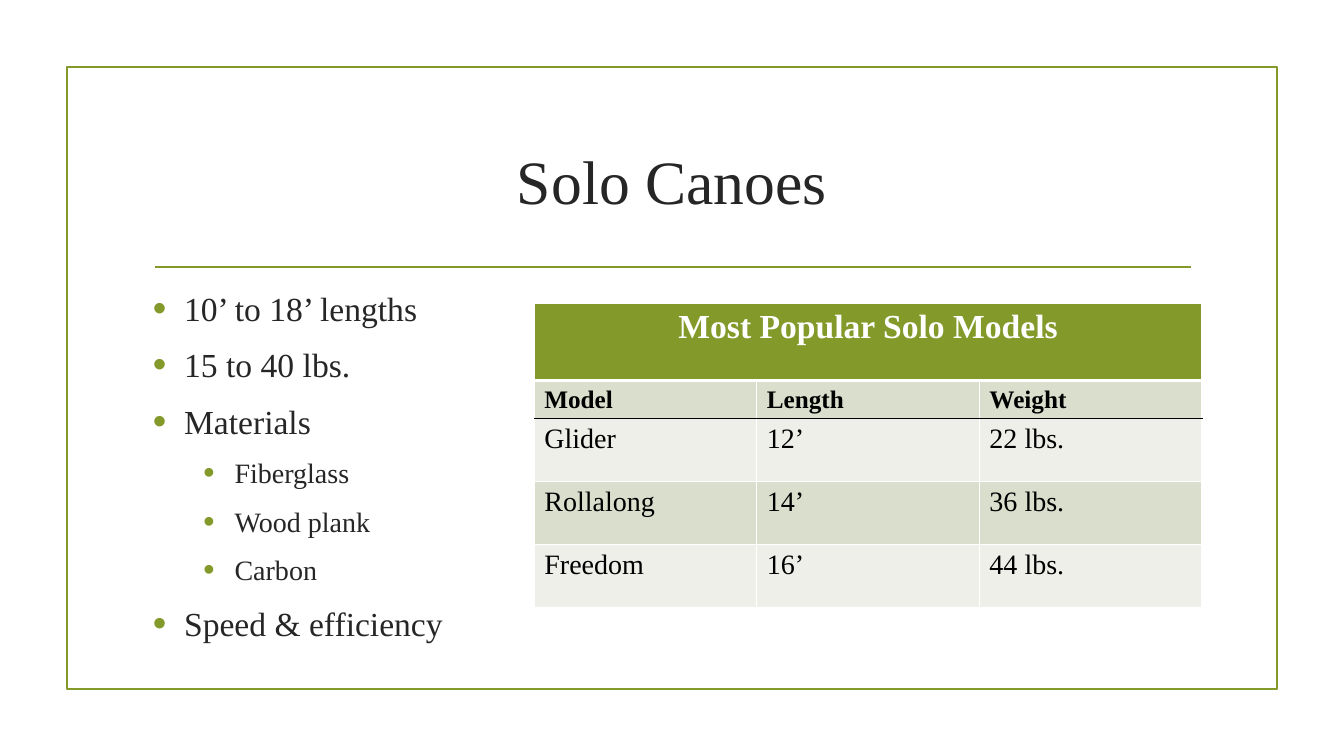
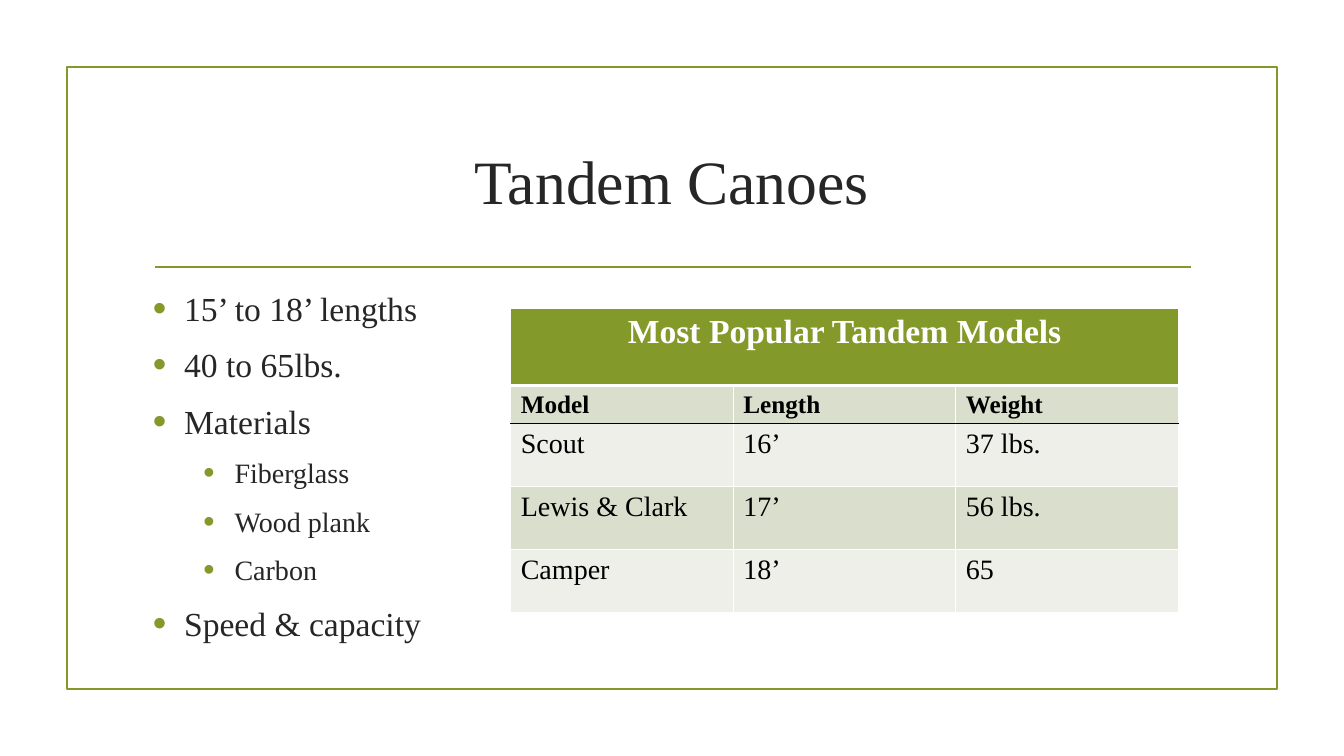
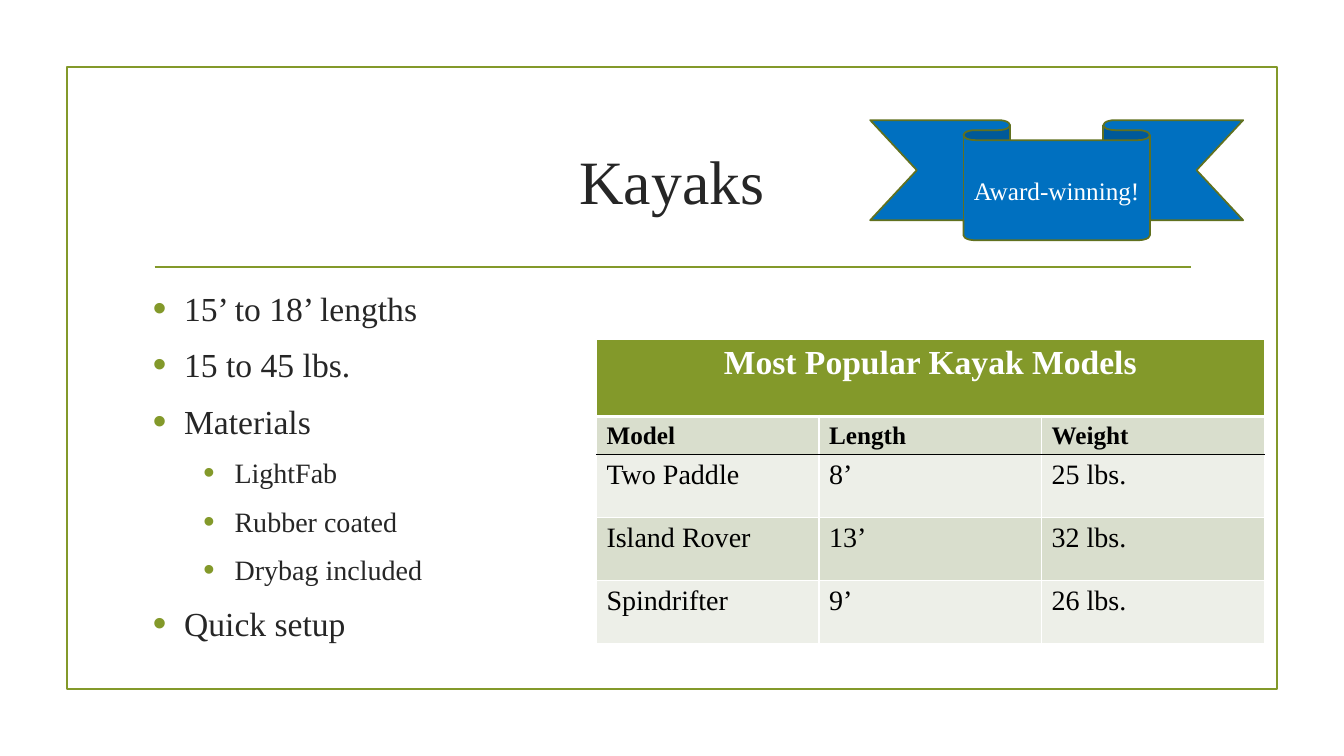
"""Build three slides on canoes and kayaks, each with a bullet list and a model table."""
from dataclasses import dataclass

from lxml import etree
from pptx import Presentation
from pptx.dml.color import RGBColor
from pptx.enum.shapes import MSO_CONNECTOR, MSO_SHAPE
from pptx.enum.text import MSO_ANCHOR, MSO_AUTO_SIZE, PP_ALIGN
from pptx.oxml.ns import qn
from pptx.util import Inches, Pt

RECTANGLE, RIBBON = MSO_SHAPE.RECTANGLE, MSO_SHAPE.DOWN_RIBBON
STRAIGHT = MSO_CONNECTOR.STRAIGHT
CENTER, LEFT = PP_ALIGN.CENTER, PP_ALIGN.LEFT
MIDDLE = MSO_ANCHOR.MIDDLE
NO_AUTOFIT = MSO_AUTO_SIZE.NONE

COLUMNS, ROWS = 160, 90
FRAME_AREA = (8, 8, 144, 74)
RULE_START, RULE_END, RULE_ROW = 18.4, 141.8, 31.8
TITLE_AREA = (17, 12.8, 126, 17.2)
BODY_AREA = (17, 33.6, 126, 43.6)
TABLE_COLUMN = 26.5
TABLE_ROWS = (9.2, 4.3, 7.5, 7.5, 7.5)
HEADINGS = ("Model", "Length", "Weight")


@dataclass(frozen=True)
class Theme:
    """Colours, type sizes and line widths of the deck."""

    font: str = "Times New Roman"
    accent: str = "83992A"
    accent_dark: str = "61711F"
    ink: str = "262626"
    black: str = "000000"
    white: str = "FFFFFF"
    band_dark: str = "D9DECD"
    band_light: str = "EDEFE8"
    award: str = "0070C0"
    title_size: int = 44
    list_sizes: tuple = (24, 20)
    table_sizes: tuple = (24, 18, 20)
    label_size: int = 18
    outline: float = 1.25
    border: float = 1
    header_border: float = 3
    space_share: float = 0.23
    space_after: int = 6
    hanging: float = 0.31
    level_step: float = 0.5


class Deck:
    """Holds the theme and the current slide, and draws each kind of element."""

    def __init__(self, theme):
        """Start an empty widescreen presentation."""
        self.theme = theme
        self.presentation = Presentation()
        self.presentation.slide_width = Inches(13.33)
        self.presentation.slide_height = Inches(7.5)
        self.page = None

    def across(self, columns):
        """Turn grid columns into a length."""
        return round(self.presentation.slide_width * columns / COLUMNS)

    def down(self, rows):
        """Turn grid rows into a length."""
        return round(self.presentation.slide_height * rows / ROWS)

    def area(self, left, top, width, height):
        """Turn a grid area into left, top, width and height."""
        return self.across(left), self.down(top), self.across(width), self.down(height)

    def set_text(self, para, text, size, color, bold=False, align=LEFT):
        """Set the text of a paragraph and format its runs."""
        para.text = text
        para.alignment = align
        for span in para.runs:
            span.font.name = self.theme.font
            span.font.size = Pt(size)
            span.font.bold = bold
            span.font.color.rgb = RGBColor.from_string(color)

    def stroke(self, line, color):
        """Give an outline the deck's width and a colour."""
        line.color.rgb = RGBColor.from_string(color)
        line.width = Pt(self.theme.outline)

    def add_page(self, title):
        """Add a slide with its frame, rule and title."""
        layout = self.presentation.slide_layouts[1]
        self.page = self.presentation.slides.add_slide(layout)
        self.shape(RECTANGLE, FRAME_AREA, self.theme.accent)
        self.rule()
        box = self.placeholder(0, TITLE_AREA)
        self.set_text(box.paragraphs[0], title, self.theme.title_size,
                      self.theme.ink, align=CENTER)

    def placeholder(self, index, area):
        """Move a placeholder and return its text frame."""
        holder = self.page.placeholders[index]
        holder.left, holder.top, holder.width, holder.height = self.area(*area)
        box = holder.text_frame
        box.word_wrap = True
        box.auto_size = NO_AUTOFIT
        box.vertical_anchor = MIDDLE
        return box

    def shape(self, kind, area, line, fill=None):
        """Draw a preset shape and return it."""
        shape = self.page.shapes.add_shape(kind, *self.area(*area))
        shape.shadow.inherit = False
        self.stroke(shape.line, line)
        if fill:
            shape.fill.solid()
            shape.fill.fore_color.rgb = RGBColor.from_string(fill)
        else:
            shape.fill.background()
        return shape

    def rule(self):
        """Draw the line below the title."""
        height = self.down(RULE_ROW)
        line = self.page.shapes.add_connector(
            STRAIGHT, self.across(RULE_START), height, self.across(RULE_END), height)
        self.stroke(line.line, self.theme.accent)
        etree.SubElement(line.element.spPr, qn("a:effectLst"))

    def bullet(self, para, level):
        """Give a paragraph a hanging round bullet."""
        theme = self.theme
        para.level = level
        props = para._p.get_or_add_pPr()
        props.set("marL", str(Inches(theme.hanging + level * theme.level_step)))
        props.set("indent", str(-Inches(theme.hanging)))
        color = etree.SubElement(props, qn("a:buClr"))
        etree.SubElement(color, qn("a:srgbClr"), val=theme.accent)
        etree.SubElement(props, qn("a:buSzPct"), val="115000")
        etree.SubElement(props, qn("a:buFont"), typeface="Arial")
        etree.SubElement(props, qn("a:buChar"), char="•")

    def bullets(self, items):
        """Fill the body placeholder with (level, text) items."""
        box = self.placeholder(1, BODY_AREA)
        for index, (level, text) in enumerate(items):
            para = box.add_paragraph() if index else box.paragraphs[0]
            size = self.theme.list_sizes[level]
            self.bullet(para, level)
            para.space_before = Pt(size * self.theme.space_share if index else 0)
            para.space_after = Pt(self.theme.space_after)
            self.set_text(para, text, size, self.theme.ink)

    def borders(self, cell, edges):
        """Draw the (side, colour, width) edges of a cell."""
        props = cell._tc.get_or_add_tcPr()
        for side, color, width in edges:
            line = etree.SubElement(props, qn(f"a:ln{side}"), w=str(Pt(width)))
            fill = etree.SubElement(line, qn("a:solidFill"))
            etree.SubElement(fill, qn("a:srgbClr"), val=color)

    def table(self, left, top, caption, models):
        """Draw a captioned table of models."""
        theme = self.theme
        records = [(caption, "", ""), HEADINGS, *models]
        area = (left, top, TABLE_COLUMN * len(HEADINGS), sum(TABLE_ROWS))
        table = self.page.shapes.add_table(
            len(records), len(HEADINGS), *self.area(*area)).table
        table.first_row = table.horz_banding = False
        for column in table.columns:
            column.width = self.across(TABLE_COLUMN)
        for row, height in zip(table.rows, TABLE_ROWS):
            row.height = self.down(height)
        table.cell(0, 0).merge(table.cell(0, len(HEADINGS) - 1))

        plain = (theme.white, theme.border)
        levels = [plain] * (len(records) + 1)
        levels[1] = (theme.white, theme.header_border)
        levels[2] = (theme.black, theme.border)
        for index, record in enumerate(records):
            band = theme.band_dark if index % 2 else theme.band_light
            fill = band if index else theme.accent
            color = theme.black if index else theme.white
            align = LEFT if index else CENTER
            size = theme.table_sizes[min(index, 2)]
            edges = [("L", *plain), ("R", *plain),
                     ("T", *levels[index]), ("B", *levels[index + 1])]
            for column, text in enumerate(record):
                cell = table.cell(index, column)
                self.borders(cell, edges)
                cell.fill.solid()
                cell.fill.fore_color.rgb = RGBColor.from_string(fill)
                if text:
                    self.set_text(cell.text_frame.paragraphs[0], text, size, color,
                                  bold=index < 2, align=align)

    def ribbon(self, area, text):
        """Draw an award ribbon with a label."""
        theme = self.theme
        box = self.shape(RIBBON, area, theme.accent_dark, theme.award).text_frame
        box.word_wrap = True
        box.vertical_anchor = MIDDLE
        box.margin_left = box.margin_right = Inches(0.05)
        self.set_text(box.paragraphs[0], text, theme.label_size, theme.white,
                      align=CENTER)


def main():
    """Build and save the deck."""
    deck = Deck(Theme())

    deck.add_page("Solo Canoes")
    deck.bullets([
        (0, "10’ to 18’ lengths"), (0, "15 to 40 lbs."), (0, "Materials"),
        (1, "Fiberglass"), (1, "Wood plank"), (1, "Carbon"),
        (0, "Speed & efficiency")])
    deck.table(63.6, 36.1, "Most Popular Solo Models", [
        ("Glider", "12’", "22 lbs."),
        ("Rollalong", "14’", "36 lbs."),
        ("Freedom", "16’", "44 lbs.")])

    deck.add_page("Tandem Canoes")
    deck.bullets([
        (0, "15’ to 18’ lengths"), (0, "40 to 65lbs."), (0, "Materials"),
        (1, "Fiberglass"), (1, "Wood plank"), (1, "Carbon"),
        (0, "Speed & capacity")])
    deck.table(60.8, 36.7, "Most Popular Tandem Models", [
        ("Scout", "16’", "37 lbs."),
        ("Lewis & Clark", "17’", "56 lbs."),
        ("Camper", "18’", "65")])

    deck.add_page("Kayaks")
    deck.bullets([
        (0, "15’ to 18’ lengths"), (0, "15 to 45 lbs."), (0, "Materials"),
        (1, "LightFab"), (1, "Rubber coated"), (1, "Drybag included"),
        (0, "Quick setup")])
    deck.table(71, 40.4, "Most Popular Kayak Models", [
        ("Two Paddle", "8’", "25 lbs."),
        ("Island Rover", "13’", "32 lbs."),
        ("Spindrifter", "9’", "26 lbs.")])
    deck.ribbon((103.6, 14.3, 44.4, 14.3), "Award-winning!")

    deck.presentation.save("out.pptx")


if __name__ == "__main__":
    main()
